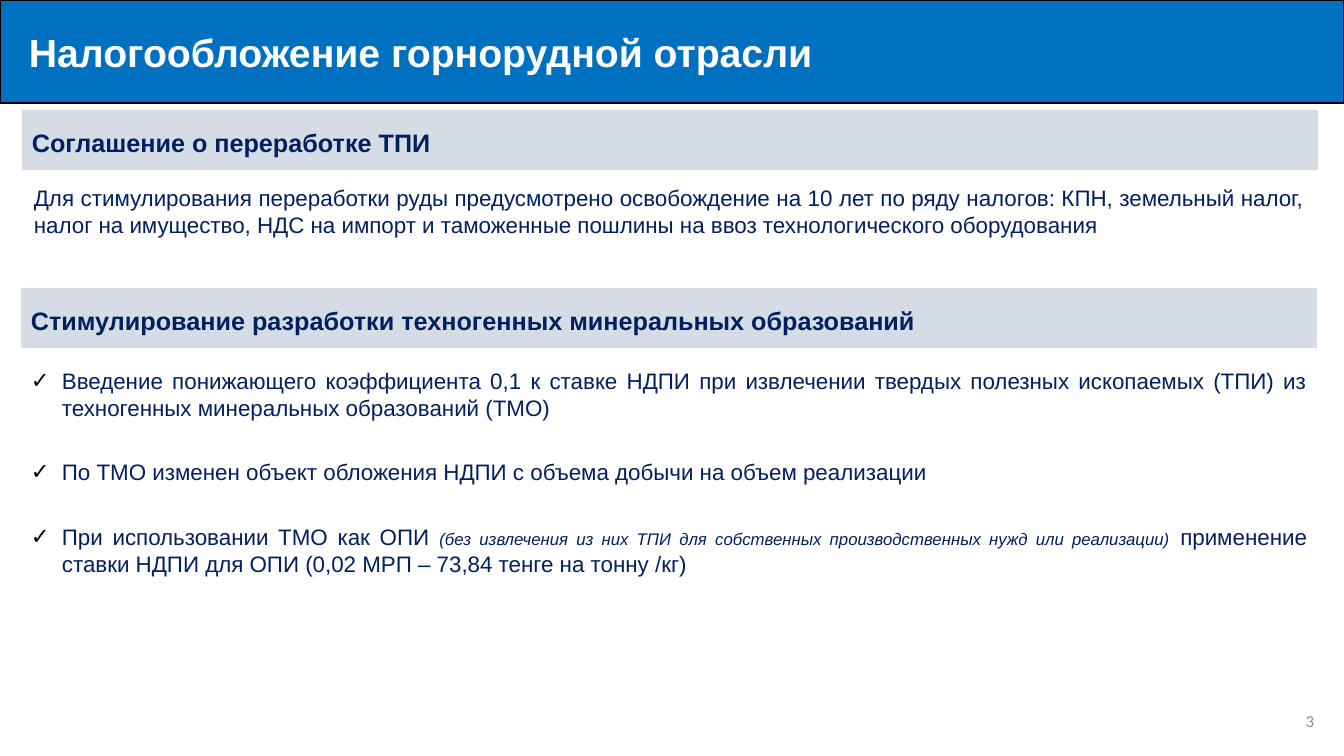
from lxml.etree import SubElement
from pptx import Presentation
from pptx.dml.color import RGBColor
from pptx.enum.shapes import MSO_SHAPE as SHAPE
from pptx.enum.text import MSO_ANCHOR as ANCHOR, PP_ALIGN as ALIGN
from pptx.oxml.ns import qn
from pptx.util import Emu, Pt

# Content
TITLE = "Налогообложение горнорудной отрасли"
PAGE = "3"
SECTIONS = [  # heading, its left and top
    ("Соглашение о переработке ТПИ", 22, 110),
    ("Стимулирование разработки техногенных минеральных образований", 21, 288),
]
INTRO = (
    "Для стимулирования переработки руды предусмотрено освобождение на 10 лет "
    "по ряду налогов: КПН, земельный налог, налог на имущество, НДС на импорт "
    "и таможенные пошлины на ввоз технологического оборудования"
)
MEASURES = [  # runs: text, is a small italic remark
    [("Введение понижающего коэффициента 0,1 к ставке НДПИ при извлечении твердых "
      "полезных ископаемых (ТПИ) из техногенных минеральных образований (ТМО)", False)],
    [("По ТМО изменен объект обложения НДПИ с объема добычи на объем реализации", False)],
    [("При использовании ТМО как ОПИ ", False),
     ("(без извлечения из них ТПИ для собственных производственных нужд "
      "или реализации)", True),
     (" применение ставки НДПИ для ОПИ (0,02 МРП – 73,84 тенге на тонну /кг)", False)],
]

BLUE, NAVY, PALE = "0070C0", "002060", "D6DCE5"
WHITE, BLACK, GREY = "FFFFFF", "000000", "8C8C8C"
WIDTH, HEIGHT = 1344, 756
BAR_W, BAR_H = 1296, 60
INDENT = 31


def px(n):
    return Emu(round(n * 914400 / 100.8))


def rgb(color):
    return RGBColor.from_string(color)


def style(r, size, color, bold=False, italic=False, name="Arial"):
    f = r.font
    f.size, f.name, f.bold, f.italic = Pt(size), name, bold, italic
    f.color.rgb = rgb(color)


def add_bar(x, y, w, h, fill, text, size, color, align):
    s = shapes.add_shape(SHAPE.RECTANGLE, px(x), px(y), px(w), px(h))
    s.shadow.inherit = False
    s.fill.solid()
    s.fill.fore_color.rgb = rgb(fill)
    s.line.fill.background()
    tf = s.text_frame
    tf.text = text
    tf.vertical_anchor = ANCHOR.MIDDLE
    p = tf.paragraphs[0]
    p.alignment = align
    style(p.runs[0], size, color, bold=True)
    return s


def add_text(x, y, w, h):
    tf = shapes.add_textbox(px(x), px(y), px(w), px(h)).text_frame
    tf.word_wrap = True
    return tf


def add_check(p):
    pPr = p._p.get_or_add_pPr()
    pPr.set("marL", str(px(INDENT)))
    pPr.set("indent", str(-px(INDENT)))
    SubElement(SubElement(pPr, qn("a:buClr")), qn("a:srgbClr"), val=BLACK)
    SubElement(pPr, qn("a:buFont"), typeface="Arial")
    SubElement(pPr, qn("a:buChar"), char="✓")


prs = Presentation()
prs.slide_width, prs.slide_height = px(WIDTH), px(HEIGHT)
shapes = prs.slides.add_slide(prs.slide_layouts[6]).shapes

# Title band
band = add_bar(0, 0, WIDTH, 103, BLUE, TITLE, 28, WHITE, ALIGN.LEFT)
band.line.color.rgb = rgb(BLACK)
band.line.width = Pt(1)
band.text_frame.paragraphs[0]._p.get_or_add_pPr().set("marL", str(px(19)))

# Section headings
for heading, x, y in SECTIONS:
    s = add_bar(x, y, BAR_W, BAR_H, PALE, heading, 18, NAVY, ALIGN.JUSTIFY)
    s.text_frame.paragraphs[0].line_spacing = 1.14

# Introductory text
tf = add_text(24, 179, 1290, 65)
tf.text = INTRO
p = tf.paragraphs[0]
p.alignment = ALIGN.JUSTIFY
style(p.runs[0], 16, NAVY)

# Checked list of measures
tf = add_text(21, 362, BAR_W, 256)
for i, runs in enumerate(MEASURES):
    p = tf.add_paragraph() if i else tf.paragraphs[0]
    add_check(p)
    p.alignment = ALIGN.JUSTIFY
    p.space_after = Pt(27)
    for text, remark in runs:
        r = p.add_run()
        r.text = text
        style(r, 12 if remark else 16, NAVY, italic=remark)

# Page number
tf = add_text(1022, 701, 302, 40)
tf.text = PAGE
tf.vertical_anchor = ANCHOR.MIDDLE
p = tf.paragraphs[0]
p.alignment = ALIGN.RIGHT
style(p.runs[0], 12, GREY, name="Calibri")

prs.save("out.pptx")
